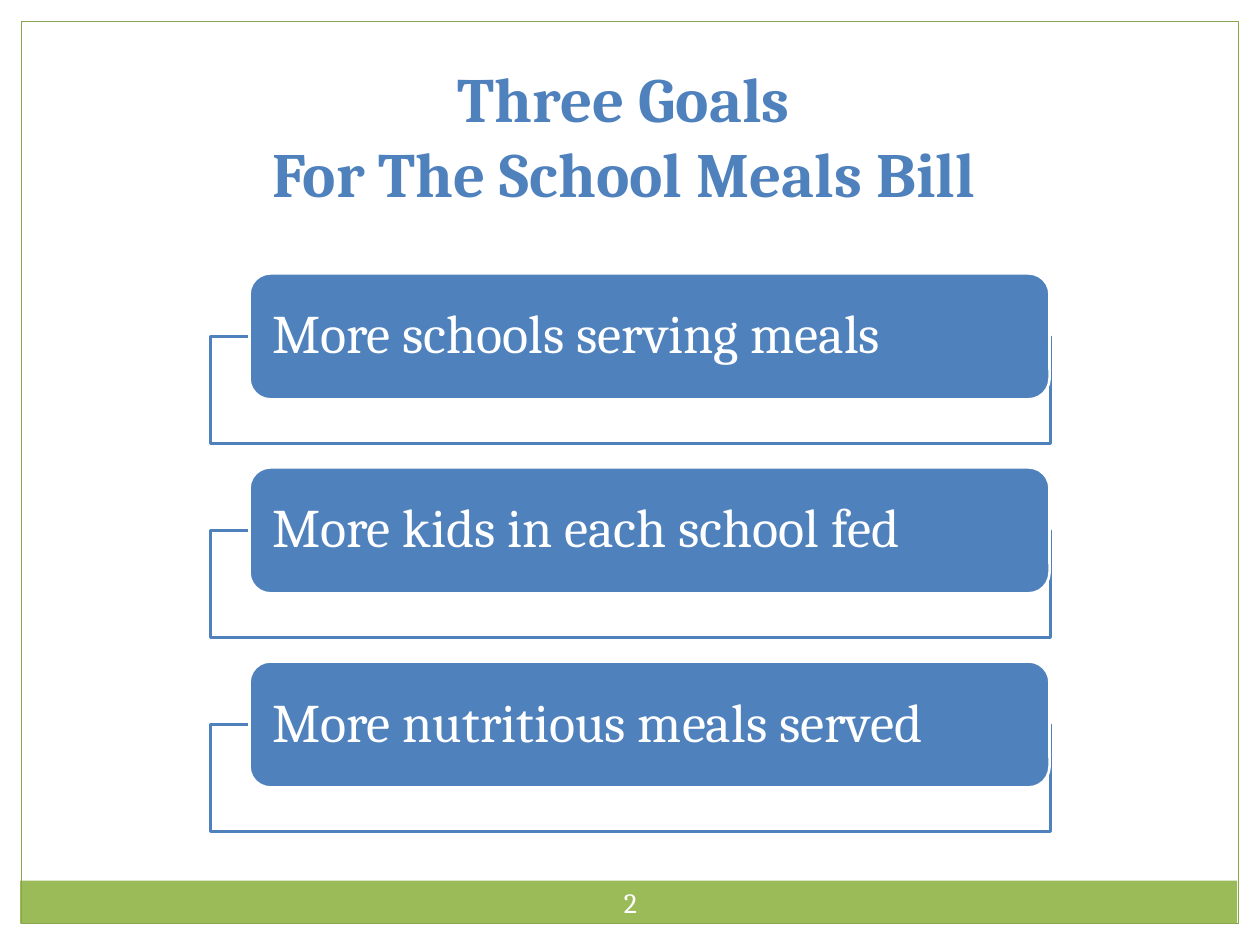
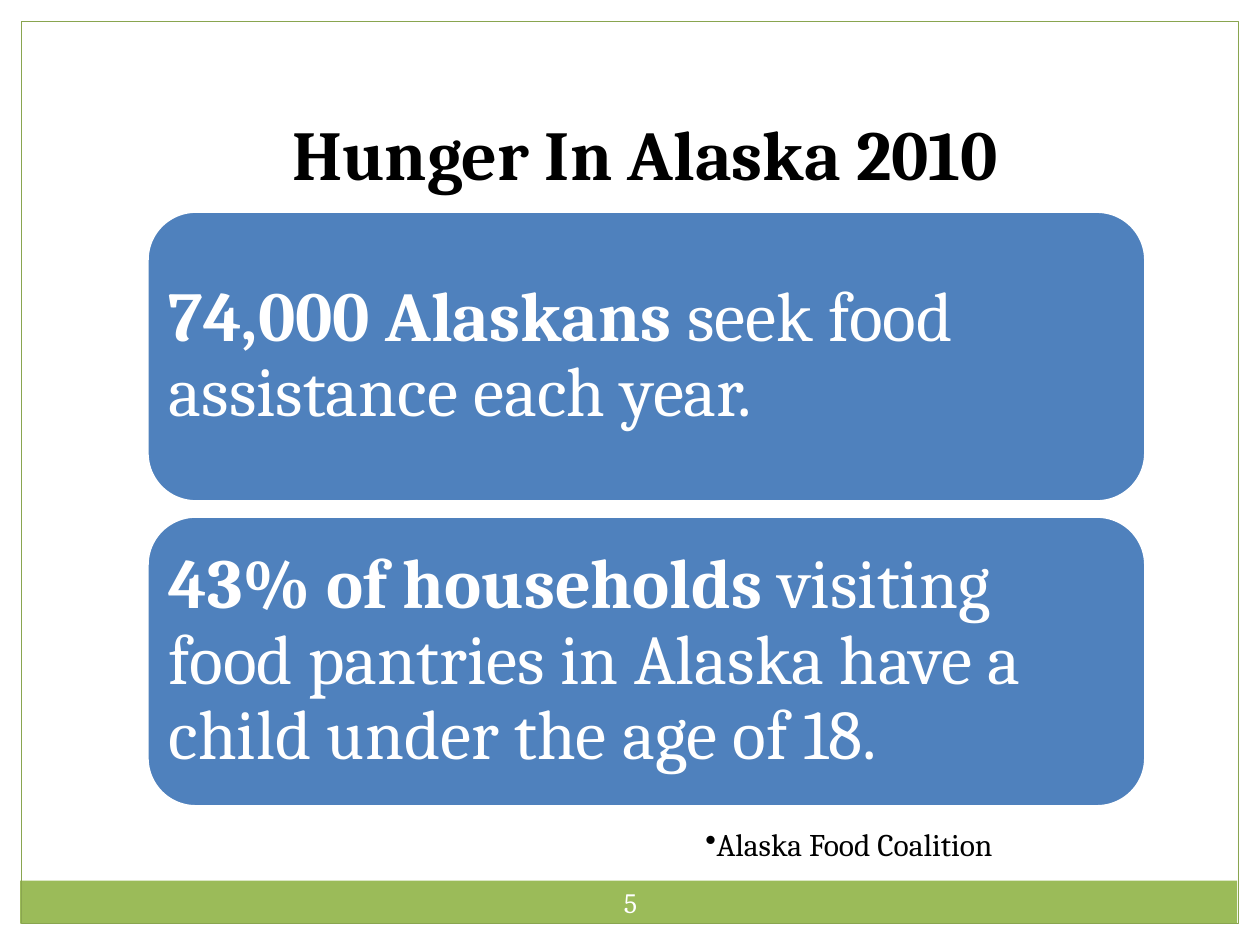
from dataclasses import dataclass

from lxml import etree
from pptx import Presentation
from pptx.dml.color import RGBColor
from pptx.enum.shapes import MSO_SHAPE
from pptx.enum.text import MSO_ANCHOR, MSO_AUTO_SIZE, PP_ALIGN
from pptx.oxml.ns import qn
from pptx.util import Inches, Pt

RECTANGLE = MSO_SHAPE.RECTANGLE
ROUNDED = MSO_SHAPE.ROUNDED_RECTANGLE
TOP, MIDDLE = MSO_ANCHOR.TOP, MSO_ANCHOR.MIDDLE
LEFT, CENTER = PP_ALIGN.LEFT, PP_ALIGN.CENTER
NO_AUTOFIT = MSO_AUTO_SIZE.NONE
TITLE_ONLY = 5

FONT = "Cambria"
BLUE, GREEN, DARK_GREEN = "4F81BD", "9BBB59", "89A54F"
WHITE, BLACK = "FFFFFF", "000000"
ROUNDED_TEXT_MARGIN = 0.049


@dataclass(frozen=True)
class Area:
    left: float
    top: float
    width: float
    height: float

    def lengths(self):
        return tuple(Inches(v) for v in (self.left, self.top, self.width, self.height))


@dataclass(frozen=True)
class Card:
    strong: str
    plain: str


BAND = Area(0.16, 6.99, 9.66, 0.34)
FRAME = Area(0.17, 0.17, 9.66, 7.16)
PAGE_NUMBER = Area(4.67, 6.92, 0.67, 0.48)

GOALS = (
    Card("", "More schools serving meals"),
    Card("", "More kids in each school fed"),
    Card("", "More nutritious meals served"),
)
HUNGER_FACTS = (
    Card("74,000 Alaskans ", "seek food assistance each year."),
    Card("43% of households ",
         "visiting food pantries in Alaska have a child under the age of 18."),
)


def color(value: str) -> RGBColor:
    return RGBColor.from_string(value)


def write(para, text: str, *, size: float, ink: str, bold=False, align=LEFT):
    """Add one formatted span of text to a paragraph."""
    para.alignment = align
    span = para.add_run()
    span.text = text
    span.font.name = FONT
    span.font.size = Pt(size)
    span.font.bold = bold
    span.font.color.rgb = color(ink)


def set_frame(box, anchor=TOP, inset_x=0.1, inset_y=0.05):
    frame = box.text_frame
    frame.word_wrap = True
    frame.auto_size = NO_AUTOFIT
    frame.vertical_anchor = anchor
    frame.margin_left = frame.margin_right = Inches(inset_x)
    frame.margin_top = frame.margin_bottom = Inches(inset_y)
    return frame


def add_box(page, kind, area: Area, *, fill="", line="", weight=0.75):
    box = page.shapes.add_shape(kind, *area.lengths())
    box.shadow.inherit = False
    if fill:
        box.fill.solid()
        box.fill.fore_color.rgb = color(fill)
    else:
        box.fill.background()
    if line:
        box.line.color.rgb = color(line)
        box.line.width = Pt(weight)
    else:
        box.line.fill.background()
    return box


def add_card(page, area: Area, card: Card, *, size: float, inset_x: float, inset_y: float):
    box = add_box(page, ROUNDED, area, fill=BLUE, line=WHITE, weight=1.5)
    corner = ROUNDED_TEXT_MARGIN * area.height
    frame = set_frame(box, MIDDLE, inset_x - corner, max(inset_y - corner, 0))
    para = frame.paragraphs[0]
    para.line_spacing = 0.9
    if card.strong:
        write(para, card.strong, size=size, ink=WHITE, bold=True)
    write(para, card.plain, size=size, ink=WHITE)


def add_page(deck, number: str, title: tuple[str, ...], area: Area, *, size: float, ink: str):
    page = deck.slides.add_slide(deck.slide_layouts[TITLE_ONLY])
    add_box(page, RECTANGLE, BAND, fill=GREEN)
    add_box(page, RECTANGLE, FRAME, line=DARK_GREEN)

    heading = page.shapes.title
    heading.left, heading.top, heading.width, heading.height = area.lengths()
    frame = set_frame(heading)
    for index, text in enumerate(title):
        para = frame.add_paragraph() if index else frame.paragraphs[0]
        write(para, text, size=size, ink=ink, bold=True, align=CENTER)

    label = page.shapes.add_textbox(*PAGE_NUMBER.lengths())
    para = set_frame(label, MIDDLE, 0.05).paragraphs[0]
    write(para, number, size=16, ink=WHITE, align=CENTER)
    return page


def build_goals(deck):
    title = ("Three Goals ", "For The School Meals Bill ")
    page = add_page(deck, "2", title, Area(0.42, 0.42, 9.17, 1.31), size=36, ink=BLUE)
    for index, goal in enumerate(GOALS):
        top = 2.17 + index * 1.54
        add_box(page, RECTANGLE, Area(1.67, top + 0.5, 6.67, 0.85),
                fill=WHITE, line=BLUE, weight=1.5)
        add_card(page, Area(1.98, top, 6.35, 1), goal, size=31, inset_x=0.18, inset_y=0)


def build_hunger(deck):
    page = add_page(deck, "5", ("Hunger In Alaska 2010",),
                    Area(1.33, 0.83, 7.58, 0.77), size=40, ink=BLACK)
    for index, fact in enumerate(HUNGER_FACTS):
        add_card(page, Area(1.17, 1.68 + index * 2.42, 7.92, 2.3), fact,
                 size=40, inset_x=0.17, inset_y=0.17)

    credit = page.shapes.add_textbox(*Area(5.5, 6.5, 4.17, 0.4).lengths())
    para = set_frame(credit).paragraphs[0]
    write(para, "Alaska Food Coalition", size=18, ink=BLACK)
    bullet = etree.SubElement(para._p.get_or_add_pPr(), qn("a:buChar"))
    bullet.set("char", "•")


def main():
    deck = Presentation()
    deck.slide_width, deck.slide_height = Inches(10), Inches(7.5)
    build_goals(deck)
    build_hunger(deck)
    deck.save("out.pptx")


if __name__ == "__main__":
    main()
